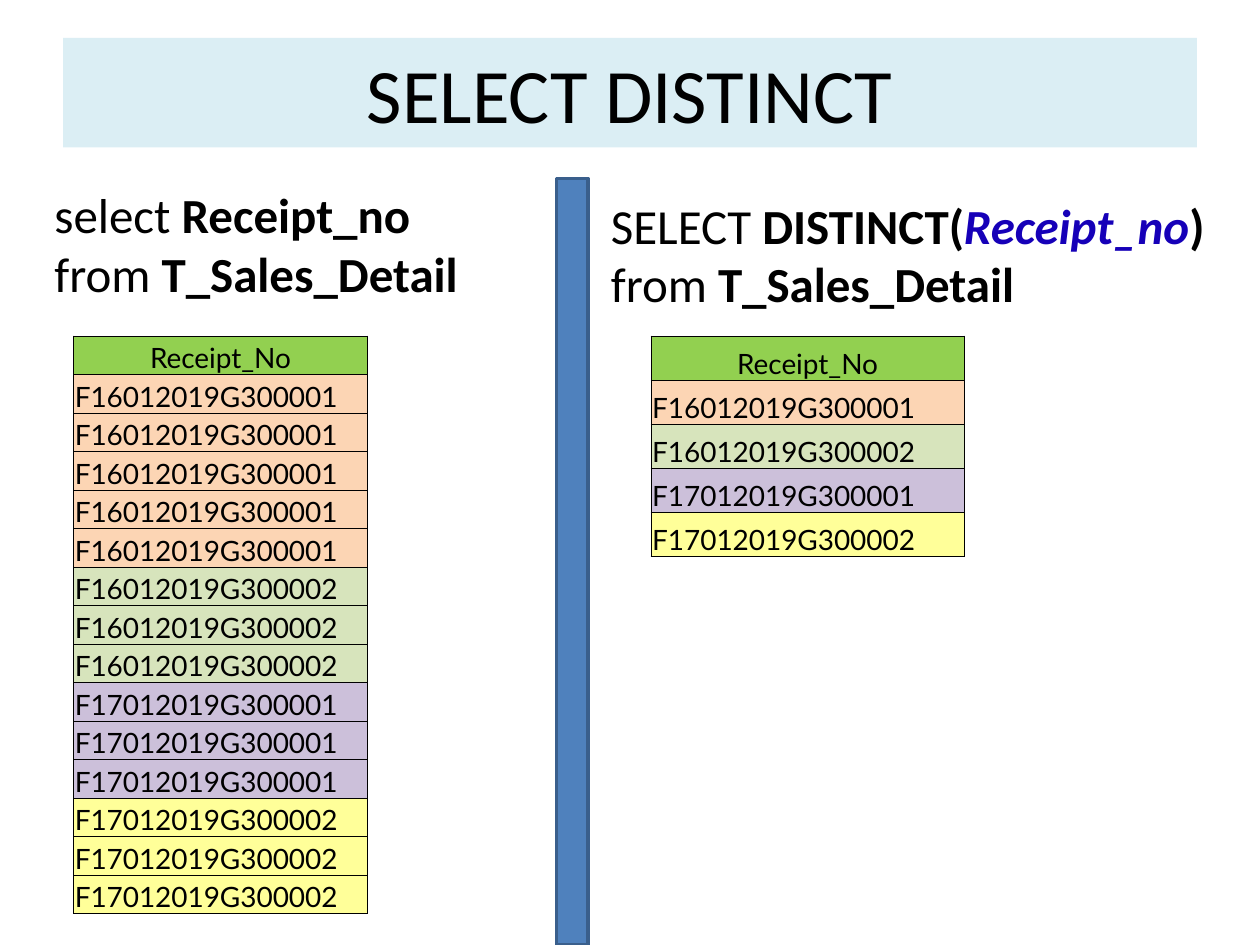
from lxml.etree import SubElement
from pptx import Presentation
from pptx.dml.color import RGBColor
from pptx.enum.shapes import MSO_SHAPE
from pptx.enum.text import MSO_ANCHOR, MSO_AUTO_SIZE, PP_ALIGN
from pptx.oxml.ns import qn
from pptx.util import Pt

BLACK = RGBColor(0x00, 0x00, 0x00)
INK = RGBColor(0x16, 0x00, 0xB8)
PALE = RGBColor(0xDB, 0xEE, 0xF4)
BLUE = RGBColor(0x4F, 0x81, 0xBD)
EDGE = RGBColor(0x3A, 0x5F, 0x8C)
GREEN = RGBColor(0x92, 0xD0, 0x50)
PEACH = RGBColor(0xFC, 0xD5, 0xB4)
SAGE = RGBColor(0xD7, 0xE4, 0xBC)
LILAC = RGBColor(0xCC, 0xC0, 0xDA)
YELLOW = RGBColor(0xFF, 0xFF, 0x99)

TITLE = "SELECT DISTINCT"
HEAD = ("Receipt_No", GREEN)
SALES = [
    ("F16012019G300001", PEACH, 5),
    ("F16012019G300002", SAGE, 3),
    ("F17012019G300001", LILAC, 3),
    ("F17012019G300002", YELLOW, 3),
]
FROM = [("from ", ""), ("T_Sales_Detail", "b")]
PLAIN = [[("select ", ""), ("Receipt_no", "b")], FROM]
UNIQUE = [
    [("SELECT", ""), (" DISTINCT(", "b"), ("Receipt_no", "bi"), (")", "b")],
    FROM,
]


def add_border(cell):
    props = cell._tc.get_or_add_tcPr()
    for n, side in enumerate(("lnL", "lnR", "lnT", "lnB")):
        line = props.makeelement(qn(f"a:{side}"), {"w": str(Pt(0.5))})
        props.insert(n, line)
        fill = SubElement(line, qn("a:solidFill"))
        SubElement(fill, qn("a:srgbClr"), val=str(BLACK))


def add_grid(slide, rows, left, top, width, step):
    frame = slide.shapes.add_table(
        len(rows), 1, Pt(left), Pt(top), Pt(width), Pt(step * len(rows)))
    table = frame.table
    table.horz_banding = False
    for n, (text, color) in enumerate(rows):
        table.rows[n].height = Pt(step)
        cell = table.cell(n, 0)
        cell.margin_left = cell.margin_right = cell.margin_top = Pt(0.72)
        cell.margin_bottom = 0
        cell.vertical_anchor = MSO_ANCHOR.BOTTOM
        cell.fill.solid()
        cell.fill.fore_color.rgb = color
        add_border(cell)
        cell.text = text
        para = cell.text_frame.paragraphs[0]
        para.alignment = PP_ALIGN.LEFT if n else PP_ALIGN.CENTER
        set_font(para.font, "Lato", 16)
        para.font.bold = False


def set_font(font, name, size):
    font.name = name
    font.size = Pt(size)
    font.color.rgb = BLACK


def add_query(slide, lines, left, top, width):
    box = slide.shapes.add_textbox(Pt(left), Pt(top), Pt(width), Pt(75))
    frame = box.text_frame
    frame.word_wrap = True
    frame.auto_size = MSO_AUTO_SIZE.SHAPE_TO_FIT_TEXT
    for n, parts in enumerate(lines):
        para = frame.add_paragraph() if n else frame.paragraphs[0]
        set_font(para.font, "Calibri", 28)
        for text, style in parts:
            run = para.add_run()
            run.text = text
            run.font.bold = "b" in style
            if "i" in style:
                run.font.italic = True
                run.font.color.rgb = INK


def main():
    deck = Presentation()
    deck.slide_width, deck.slide_height = Pt(720), Pt(540)
    slide = deck.slides.add_slide(deck.slide_layouts[5])

    title = slide.shapes.title
    title.left, title.top = Pt(36), Pt(21.6)
    title.width, title.height = Pt(648), Pt(62.6)
    title.fill.solid()
    title.fill.fore_color.rgb = PALE
    title.text = TITLE
    title.text_frame.vertical_anchor = MSO_ANCHOR.MIDDLE
    para = title.text_frame.paragraphs[0]
    para.alignment = PP_ALIGN.CENTER
    set_font(para.font, "Calibri", 44)

    every = [(text, color) for text, color, count in SALES for _ in range(count)]
    once = [(text, color) for text, color, _ in SALES]
    add_grid(slide, [HEAD] + every, 42, 192, 168, 22)
    add_grid(slide, [HEAD] + once, 372, 192, 179, 25.2)
    add_query(slide, PLAIN, 24, 102, 276)
    add_query(slide, UNIQUE, 342, 108, 360)

    bar = slide.shapes.add_shape(
        MSO_SHAPE.RECTANGLE, Pt(318), Pt(102), Pt(18), Pt(438))
    bar.shadow.inherit = False
    bar.fill.solid()
    bar.fill.fore_color.rgb = BLUE
    bar.line.color.rgb = EDGE
    bar.line.width = Pt(2)

    deck.save("out.pptx")


if __name__ == "__main__":
    main()
